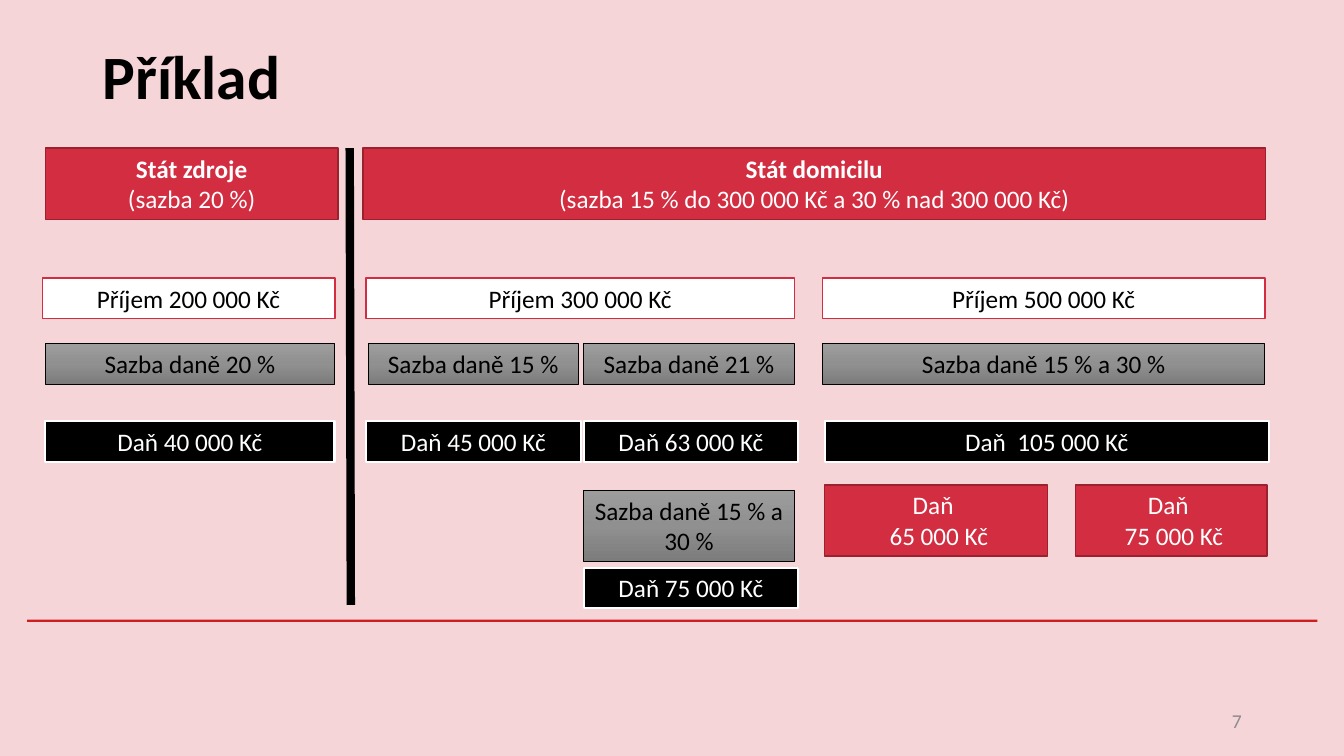
"""Build the slide comparing tax in the source state and the state of domicile."""
from copy import deepcopy

from pptx import Presentation
from pptx.dml.color import RGBColor
from pptx.enum.shapes import MSO_CONNECTOR, MSO_SHAPE
from pptx.enum.text import MSO_ANCHOR, MSO_AUTO_SIZE, PP_ALIGN
from pptx.oxml.ns import qn
from pptx.oxml.xmlchemy import OxmlElement
from pptx.util import Pt

COLORS = {
    "background": "F6D5D9", "red": "D22D40", "dark red": "9B212F",
    "rule": "CD1F21", "black": "000000", "white": "FFFFFF", "number": "8C8C8C",
    "gray top": "9D9D9D", "gray middle": "909090", "gray bottom": "7C7C7C",
}
STYLES = {
    "state": ("red", "dark red", 1, "white"),
    "income": ("white", "red", 1, "black"),
    "rate": (None, "black", 0.5, "black"),
    "tax": ("black", "white", 1.5, "white"),
}
GRAY_STOPS = [(0, "gray top"), (0.5, "gray middle"), (1, "gray bottom")]
LINE_HEIGHT, TWO_LINES = 29, 51


def color(name):
    return RGBColor.from_string(COLORS[name])


def add_run(paragraph, text, size, color_name, bold=False):
    run = paragraph.add_run()
    run.text = text
    run.font.name = "Calibri"
    run.font.size = Pt(size)
    run.font.bold = bold
    run.font.color.rgb = color(color_name)


presentation = Presentation()
presentation.slide_width, presentation.slide_height = Pt(960), Pt(540)
slide = presentation.slides.add_slide(presentation.slide_layouts[6])
slide.background.fill.solid()
slide.background.fill.fore_color.rgb = color("background")

rule = slide.shapes.add_shape(MSO_SHAPE.RECTANGLE, Pt(19.4), Pt(442.6), Pt(921.6), Pt(1.6))
rule.shadow.inherit = False
rule.fill.solid()
rule.fill.fore_color.rgb = color("rule")
rule.line.fill.background()

divider = slide.shapes.add_connector(
    MSO_CONNECTOR.STRAIGHT, Pt(249.8), Pt(105.8), Pt(250.6), Pt(432))
divider.line.color.rgb = color("black")
divider.line.width = Pt(6)
divider._element.spPr.append(OxmlElement("a:effectLst"))

captions = [
    ("Příklad", 66.2, 1.4, 828, 104.4, 44, "black", True, PP_ALIGN.LEFT),
    ("7", 678.2, 500.4, 216, 28.8, 14, "number", False, PP_ALIGN.RIGHT),
]
for text, left, top, width, height, size, color_name, bold, alignment in captions:
    caption = slide.shapes.add_textbox(Pt(left), Pt(top), Pt(width), Pt(height))
    frame = caption.text_frame
    frame.word_wrap = True
    frame.vertical_anchor = MSO_ANCHOR.MIDDLE
    frame.paragraphs[0].alignment = alignment
    add_run(frame.paragraphs[0], text, size, color_name, bold)

state_boxes = [
    (32.4, 209, "Stát zdroje", "(sazba 20 %)"),
    (259.2, 645, "Stát domicilu", "(sazba 15 % do 300 000 Kč a 30 % nad 300 000 Kč)"),
]
boxes = [("state", left, 105.8, width, TWO_LINES, [name, rate])
         for left, width, name, rate in state_boxes]

rows = [
    ("income", 198.5, [(30.2, 209, "Příjem 200 000 Kč"),
                       (261.4, 306, "Příjem 300 000 Kč"),
                       (587.5, 316, "Příjem 500 000 Kč")]),
    ("rate", 245.5, [(32.4, 206.6, "Sazba daně 20 %"),
                     (262.8, 150.5, "Sazba daně 15 %"),
                     (416.9, 150.5, "Sazba daně 21 %"),
                     (587.5, 316, "Sazba daně 15 % a 30 %")]),
    ("tax", 301, [(32.4, 206.6, "Daň 40 000 Kč"),
                  (261.4, 153.4, "Daň 45 000 Kč"),
                  (416.9, 153.4, "Daň 63 000 Kč"),
                  (589, 317.5, "Daň  105 000 Kč")]),
    ("tax", 405.4, [(416.9, 153.4, "Daň 75 000 Kč")]),
]
boxes += [(style, left, top, width, LINE_HEIGHT, [text])
          for style, top, cells in rows for left, width, text in cells]
boxes += [
    ("rate", 416.9, 350, 150.5, TWO_LINES, ["Sazba daně 15 % a 30 %"]),
    ("state", 589, 346.3, 159.1, TWO_LINES, ["Daň \v 65 000 Kč"]),
    ("state", 768.2, 346.3, 136.8, TWO_LINES, ["Daň \v 75 000 Kč"]),
]

for style, left, top, width, height, lines in boxes:
    fill_name, line_name, line_width, text_name = STYLES[style]
    shape = slide.shapes.add_shape(
        MSO_SHAPE.RECTANGLE, Pt(left), Pt(top), Pt(width), Pt(height))
    shape.shadow.inherit = False
    if fill_name:
        shape.fill.solid()
        shape.fill.fore_color.rgb = color(fill_name)
    else:
        shape.fill.gradient()
        shape.fill.gradient_angle = 270
        stop_list = shape._element.spPr.find(qn("a:gradFill")).find(qn("a:gsLst"))
        stop_list.append(deepcopy(stop_list[0]))
        for stop, (position, stop_name) in zip(shape.fill.gradient_stops, GRAY_STOPS):
            stop.position = position
            stop.color.rgb = color(stop_name)
    shape.line.color.rgb = color(line_name)
    shape.line.width = Pt(line_width)

    frame = shape.text_frame
    frame.word_wrap = True
    frame.auto_size = MSO_AUTO_SIZE.SHAPE_TO_FIT_TEXT
    frame.vertical_anchor = MSO_ANCHOR.TOP
    for index, line in enumerate(lines):
        paragraph = frame.add_paragraph() if index else frame.paragraphs[0]
        paragraph.alignment = PP_ALIGN.CENTER
        for part_index, part in enumerate(line.split("\v")):
            if part_index:
                paragraph.add_line_break()
            add_run(paragraph, part, 18, text_name, len(lines) > 1 and index == 0)

presentation.save("out.pptx")
